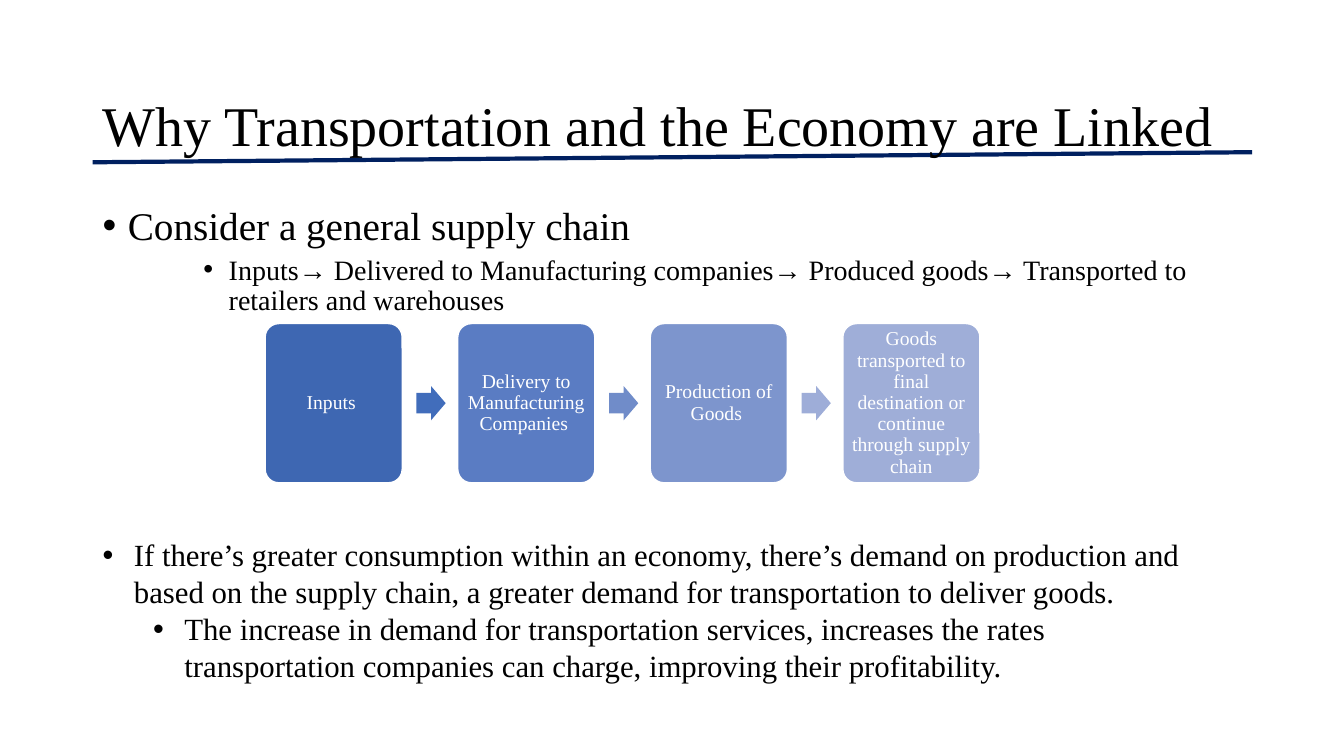
from lxml import etree
from pptx import Presentation
from pptx import util as u
from pptx.dml.color import RGBColor
from pptx.enum import shapes, text
from pptx.oxml import ns


def color(value):
    return RGBColor.from_string(value)


class SlideBuilder:
    font = "Times New Roman"
    ink = "000000"
    light = "FFFFFF"
    rule_color = "002060"

    def __init__(self, slide):
        self.slide = slide

    def rule(self, x1, y1, x2, y2):
        rule = self.slide.shapes.add_connector(
            shapes.MSO_CONNECTOR.STRAIGHT, *map(u.Inches, (x1, y1, x2, y2)))
        rule.line.color.rgb = color(self.rule_color)
        rule.line.width = u.Pt(3)
        etree.SubElement(rule._element.spPr, ns.qn("a:effectLst"))

    def add_words(self, paragraph, words, size, ink, spacing):
        paragraph.line_spacing = spacing
        run = paragraph.add_run()
        run.text = words
        run.font.name = self.font
        run.font.size = u.Pt(size)
        run.font.color.rgb = color(ink)

    def bullet(self, paragraph, margin, hanging):
        props = paragraph._p.get_or_add_pPr()
        props.set("marL", str(u.Inches(margin)))
        props.set("indent", str(-u.Inches(hanging)))
        etree.SubElement(props, ns.qn("a:buFont"), typeface="Arial")
        etree.SubElement(props, ns.qn("a:buChar"), char="•")

    def text_box(self, left, top, width, height):
        frame = self.slide.shapes.add_textbox(
            *map(u.Inches, (left, top, width, height))).text_frame
        frame.word_wrap = True
        return frame

    def title(self, words, *box):
        frame = self.text_box(*box)
        frame.vertical_anchor = text.MSO_ANCHOR.MIDDLE
        self.add_words(frame.paragraphs[0], words, 40, self.ink, 0.9)

    def bullets(self, items, hanging, spacing, gap, *box):
        frame = self.text_box(*box)
        for index, (words, size, level, margin) in enumerate(items):
            paragraph = frame.add_paragraph() if index else frame.paragraphs[0]
            paragraph.level = level
            self.bullet(paragraph, margin, hanging)
            if index:
                paragraph.space_before = u.Pt(gap)
            self.add_words(paragraph, words, size, self.ink, spacing)

    def block(self, kind, adjustments, fill, *box):
        block = self.slide.shapes.add_shape(kind, *map(u.Inches, box))
        block.shadow.inherit = False
        for index, value in enumerate(adjustments):
            block.adjustments[index] = value
        block.fill.solid()
        block.fill.fore_color.rgb = color(fill)
        block.line.fill.background()
        return block

    def stage(self, words, fill, *box):
        stage = self.block(shapes.MSO_SHAPE.ROUNDED_RECTANGLE, [0.1], fill, *box)
        stage.line.color.rgb = color(self.light)
        stage.line.width = u.Pt(1)
        frame = stage.text_frame
        frame.word_wrap = True
        frame.vertical_anchor = text.MSO_ANCHOR.MIDDLE
        frame.margin_left = frame.margin_right = u.Inches(0.05)
        frame.margin_top = frame.margin_bottom = u.Inches(0.05)
        paragraph = frame.paragraphs[0]
        paragraph.alignment = text.PP_ALIGN.CENTER
        self.add_words(paragraph, words, 14, self.light, 0.9)

    def arrow(self, fill, *box):
        self.block(shapes.MSO_SHAPE.RIGHT_ARROW, [0.6, 0.5], fill, *box)


def main():
    deck = Presentation()
    deck.slide_width = u.Inches(13.33)
    deck.slide_height = u.Inches(7.5)
    builder = SlideBuilder(deck.slides.add_slide(deck.slide_layouts[6]))

    builder.rule(0.92, 1.61, 12.42, 1.51)
    builder.title("Why Transportation and the Economy are Linked", 0.92, 0.55, 11.5, 1.45)
    builder.bullets([
        ("Consider a general supply chain", 28, 0, 0.25),
        ("Inputs→ Delivered to Manufacturing companies→ Produced goods→ "
         "Transported to retailers and warehouses", 20, 2, 1.25),
    ], 0.25, 0.9, 5, 0.92, 2, 11.5, 4.76)

    stages = [
        ("Inputs ", "3E67B2"),
        ("Delivery to Manufacturing Companies ", "5A7CC3"),
        ("Production of Goods ", "7D95CD"),
        ("Goods transported to final destination or continue through supply chain", "9FAED8"),
    ]
    chain_left, stage_pitch = 2.63, 1.91
    for index, (words, fill) in enumerate(stages):
        builder.stage(words, fill, chain_left + index * stage_pitch, 3.21, 1.36, 1.58)
    for index, fill in enumerate(["416DBB", "708CC9", "9EADD8"]):
        builder.arrow(fill, chain_left + 1.5 + index * stage_pitch, 3.83, 0.29, 0.34)

    builder.bullets([
        ("If there’s greater consumption within an economy, there’s demand on production "
         "and based on the supply chain, a greater demand for transportation to deliver goods.",
         22, 0, 0.31),
        ("The increase in demand for transportation services, increases the rates "
         "transportation companies can charge, improving their profitability.", 22, 1, 0.81),
    ], 0.31, 1, 0, 0.92, 5.27, 11.02, 1.58)

    deck.save("out.pptx")


if __name__ == "__main__":
    main()
